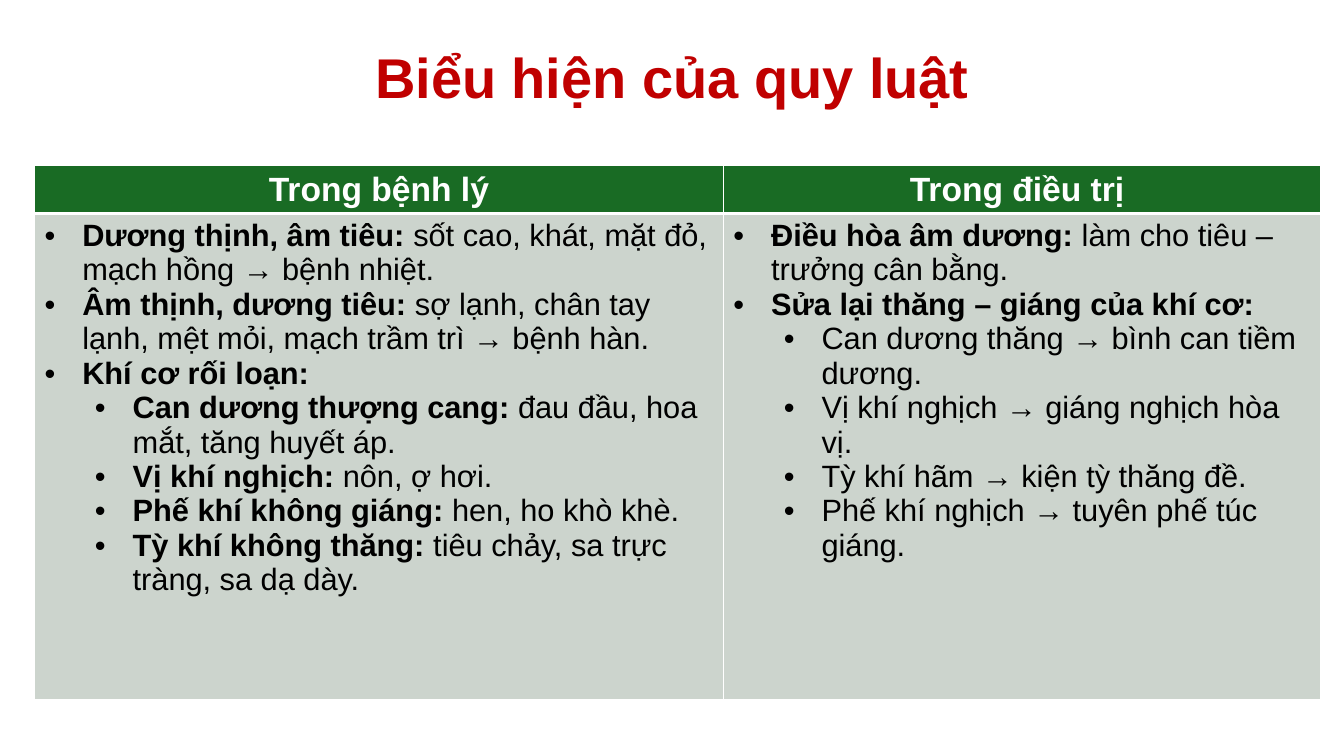
from pptx import Presentation
from pptx.dml.color import RGBColor
from pptx.enum.text import MSO_ANCHOR, PP_ALIGN
from pptx.oxml.ns import qn
from pptx.util import Cm, Pt
from lxml import etree

CENTER, LEFT = PP_ALIGN.CENTER, PP_ALIGN.LEFT
MIDDLE, TOP = MSO_ANCHOR.MIDDLE, MSO_ANCHOR.TOP

# Each item: level, bold lead, plain rest
HEADS = ["Trong bệnh lý", "Trong điều trị "]
ITEMS = [
    [
        (0, "Dương thịnh, âm tiêu:", " sốt cao, khát, mặt đỏ, mạch hồng → bệnh nhiệt."),
        (0, "Âm thịnh, dương tiêu:", " sợ lạnh, chân tay lạnh, mệt mỏi, mạch trầm trì → bệnh hàn."),
        (0, "Khí cơ rối loạn:", ""),
        (1, "Can dương thượng cang:", " đau đầu, hoa mắt, tăng huyết áp."),
        (1, "Vị khí nghịch:", " nôn, ợ hơi."),
        (1, "Phế khí không giáng:", " hen, ho khò khè."),
        (1, "Tỳ khí không thăng:", " tiêu chảy, sa trực tràng, sa dạ dày."),
    ],
    [
        (0, "Điều hòa âm dương:", " làm cho tiêu – trưởng cân bằng."),
        (0, "Sửa lại thăng – giáng của khí cơ:", ""),
        (1, "", "Can dương thăng → bình can tiềm dương."),
        (1, "", "Vị khí nghịch → giáng nghịch hòa vị."),
        (1, "", "Tỳ khí hãm → kiện tỳ thăng đề."),
        (1, "", "Phế khí nghịch → tuyên phế túc giáng."),
    ],
]


def rgb(code):
    return RGBColor.from_string(code)


def write(para, lead, rest="", size=22, color="000000", align=LEFT, level=None, space=1.0):
    """Fill a paragraph with a bold lead and a plain rest; a level adds a bullet."""
    para.alignment = align
    para.line_spacing = space
    if level is not None:
        para.level = level
        props = para._p.get_or_add_pPr()
        props.set("marL", str(Cm(0.95 + 1.27 * level)))
        props.set("indent", str(-Cm(0.95)))
        etree.SubElement(props, qn("a:buFont"), typeface="Arial")
        etree.SubElement(props, qn("a:buChar"), char="•")
    for text, bold in ((lead, True), (rest, False)):
        if text:
            run = para.add_run()
            run.text = text
            font = run.font
            font.name, font.size, font.bold = "Arial", Pt(size), bold
            font.color.rgb = rgb(color)


class Deck:
    head, body, line, title = "196B24", "CCD4CD", "FFFFFF", "C00000"

    def __init__(self):
        self.prs = Presentation()
        self.prs.slide_width, self.prs.slide_height = Cm(33.87), Cm(19.05)
        self.slide = self.prs.slides.add_slide(self.prs.slide_layouts[6])

    def heading(self, text, x, y, w, h):
        frame = self.slide.shapes.add_textbox(Cm(x), Cm(y), Cm(w), Cm(h)).text_frame
        frame.word_wrap = True
        frame.vertical_anchor = MIDDLE
        write(frame.paragraphs[0], text, size=40, color=self.title, align=CENTER, space=0.9)

    def style(self, cell, fill, top=1, bottom=1):
        props = cell._tc.get_or_add_tcPr()
        for side, width in (("L", 1), ("R", 1), ("T", top), ("B", bottom)):
            edge = etree.SubElement(props, qn("a:ln" + side), w=str(Pt(width)))
            paint = etree.SubElement(edge, qn("a:solidFill"))
            etree.SubElement(paint, qn("a:srgbClr"), val=self.line)
        cell.fill.solid()
        cell.fill.fore_color.rgb = rgb(fill)
        cell.vertical_anchor = TOP

    def table(self, heads, lists, x, y, cols, rows):
        table = self.slide.shapes.add_table(
            len(rows), len(cols), Cm(x), Cm(y), Cm(sum(cols)), Cm(sum(rows))).table
        for row, height in zip(table.rows, rows):
            row.height = Cm(height)
        for i, (width, head, items) in enumerate(zip(cols, heads, lists)):
            table.columns[i].width = Cm(width)
            top, low = table.cell(0, i), table.cell(1, i)
            self.style(top, self.head, bottom=3)
            self.style(low, self.body, top=3)
            write(top.text_frame.paragraphs[0], head, size=24, color="FFFFFF", align=CENTER)
            frame = low.text_frame
            for n, (level, lead, rest) in enumerate(items):
                para = frame.add_paragraph() if n else frame.paragraphs[0]
                write(para, lead, rest, level=level)


def main():
    deck = Deck()
    # Comparison table
    deck.table(HEADS, ITEMS, 0.87, 4.18, cols=[17.36, 15.04], rows=[1.18, 12.24])
    # Title
    deck.heading("Biểu hiện của quy luật", 2.33, 1.02, 29.21, 2.03)
    deck.prs.save("out.pptx")


if __name__ == "__main__":
    main()
